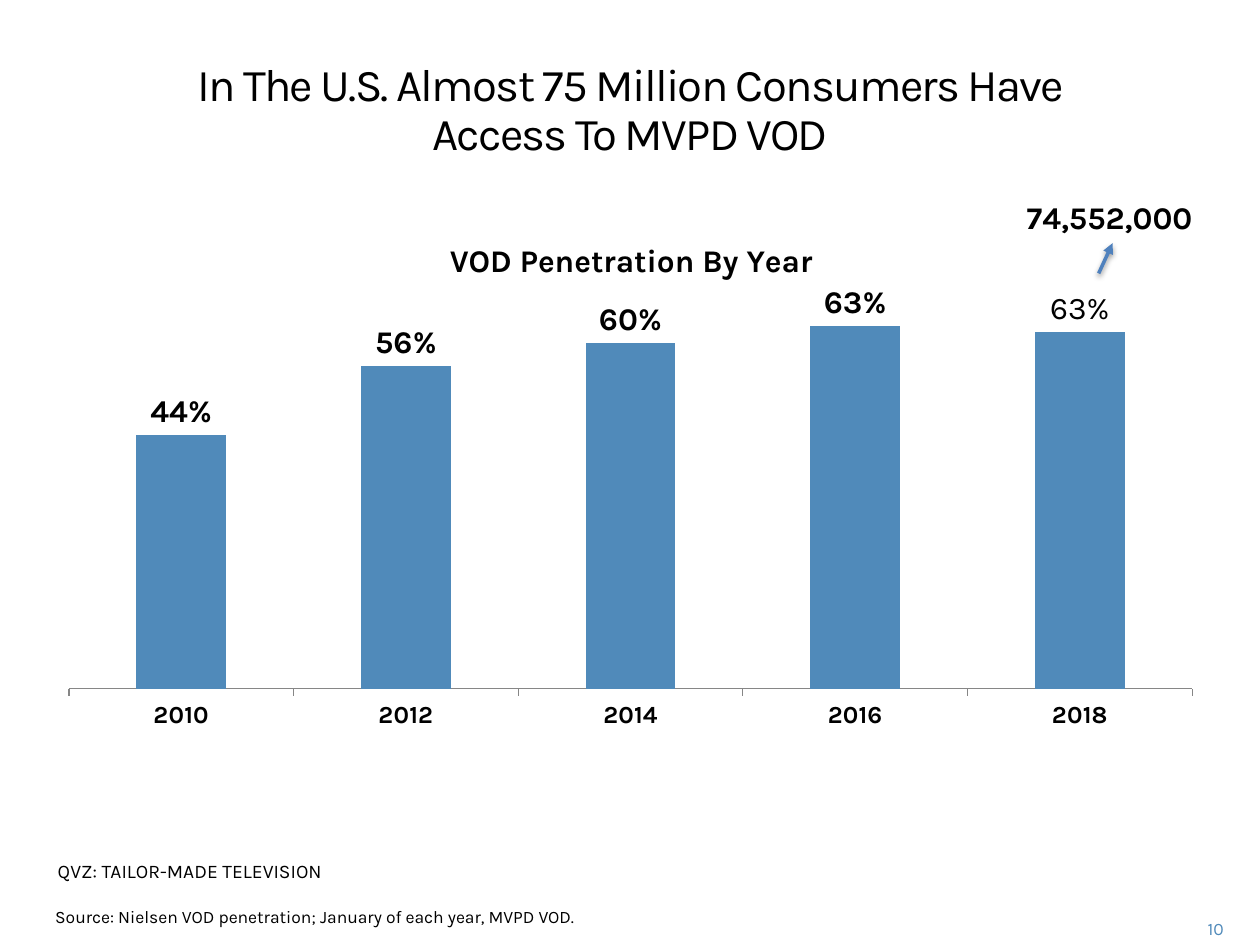
from dataclasses import dataclass
from typing import Optional

from lxml import etree
from pptx import Presentation
from pptx.chart.data import CategoryChartData
from pptx.dml.color import RGBColor
from pptx.enum.chart import XL_CHART_TYPE, XL_LABEL_POSITION, XL_TICK_LABEL_POSITION, XL_TICK_MARK
from pptx.enum.shapes import MSO_CONNECTOR
from pptx.enum.text import MSO_ANCHOR, PP_ALIGN
from pptx.oxml import parse_xml
from pptx.oxml.ns import nsdecls, qn
from pptx.util import Inches, Length, Pt

COLUMN_CLUSTERED = XL_CHART_TYPE.COLUMN_CLUSTERED
OUTSIDE_END = XL_LABEL_POSITION.OUTSIDE_END
NO_TICK_LABELS = XL_TICK_LABEL_POSITION.NONE
TICK_OUTSIDE, TICK_NONE = XL_TICK_MARK.OUTSIDE, XL_TICK_MARK.NONE
STRAIGHT = MSO_CONNECTOR.STRAIGHT
TOP, MIDDLE = MSO_ANCHOR.TOP, MSO_ANCHOR.MIDDLE
LEFT, CENTER, RIGHT = PP_ALIGN.LEFT, PP_ALIGN.CENTER, PP_ALIGN.RIGHT

BLACK = RGBColor(0x00, 0x00, 0x00)
BAR_BLUE = RGBColor(0x50, 0x8A, 0xBA)
ARROW_BLUE = RGBColor(0x4F, 0x81, 0xBD)
AXIS_GRAY = RGBColor(0x86, 0x86, 0x86)
FONT = "Karla"

# The slide is a grid of 100 columns by 75 rows
SLIDE_WIDTH, SLIDE_HEIGHT = Inches(10), Inches(7.5)
COLUMNS, ROWS = 100, 75


@dataclass(frozen=True)
class Area:
    column: float
    row: float
    columns: float
    rows: float


@dataclass(frozen=True)
class Label:
    text: str
    area: Area
    size: float
    color: RGBColor = BLACK
    bold: bool = False
    align: PP_ALIGN = LEFT
    anchor: MSO_ANCHOR = TOP
    wrap: bool = True
    line_spacing: Optional[float] = None
    tracking: Optional[int] = None


LABELS = [
    Label("10", Area(92, 72.4, 6.1, 2.5), 10, BAR_BLUE, align=RIGHT, anchor=MIDDLE),
    Label("Source: Nielsen VOD penetration; January of each year, MVPD VOD.",
          Area(3.4, 71.4, 44.7, 2.7), 10, wrap=False),
    Label("In The U.S. Almost 75 Million Consumers Have Access To MVPD VOD",
          Area(9.1, 4.1, 81.8, 9.4), 26, align=CENTER, anchor=MIDDLE,
          line_spacing=28, tracking=-100),
    Label("74,552,000", Area(80.5, 15.2, 15.7, 4), 18, bold=True, wrap=False),
    Label("QVZ: TAILOR-MADE TELEVISION", Area(3.6, 67.7, 30.8, 4.7), 11),
]

PENETRATION = {"2010": 0.44, "2012": 0.56, "2014": 0.6, "2016": 0.63, "2018": 0.62}
CHART_AREA = Area(3.9, 16.9, 92.2, 42)


def across(columns: float) -> Length:
    return Length(round(SLIDE_WIDTH * columns / COLUMNS))


def down(rows: float) -> Length:
    return Length(round(SLIDE_HEIGHT * rows / ROWS))


def place(area: Area) -> tuple[Length, Length, Length, Length]:
    return across(area.column), down(area.row), across(area.columns), down(area.rows)


def style_font(font, size: float, bold: bool = False, color: RGBColor = BLACK) -> None:
    font.name = FONT
    font.size = Pt(size)
    font.bold = bold
    font.color.rgb = color


def add_label(slide, label: Label) -> None:
    frame = slide.shapes.add_textbox(*place(label.area)).text_frame
    frame.word_wrap = label.wrap
    frame.vertical_anchor = label.anchor
    paragraph = frame.paragraphs[0]
    paragraph.alignment = label.align
    if label.line_spacing:
        paragraph.line_spacing = Pt(label.line_spacing)
    run = paragraph.add_run()
    run.text = label.text
    style_font(run.font, label.size, label.bold, label.color)
    if label.tracking:
        run.font._element.set("spc", str(label.tracking))


def manual_layout(target: str, **shares: float):
    """Build a chart layout from shares of the chart's size."""
    layout = parse_xml(f"<c:layout {nsdecls('c')}><c:manualLayout/></c:layout>")
    values = {"layoutTarget": target} if target else {}
    values |= {"xMode": "edge", "yMode": "edge"} | shares
    for name, value in values.items():
        etree.SubElement(layout[0], qn(f"c:{name}")).set("val", str(value))
    return layout


def replace_layout(parent, layout, position: int) -> None:
    for old in parent.findall(qn("c:layout")):
        parent.remove(old)
    parent.insert(position, layout)


def add_penetration_chart(slide) -> None:
    data = CategoryChartData(number_format="0%")
    data.categories = list(PENETRATION)
    data.add_series("Series 1", list(PENETRATION.values()))
    chart = slide.shapes.add_chart(COLUMN_CLUSTERED, *place(CHART_AREA), data).chart
    style_font(chart.font, 18)
    chart.has_legend = False

    # Title and plot position
    chart.has_title = True
    title = chart.chart_title
    title.include_in_layout = False
    run = title.text_frame.paragraphs[0].add_run()
    run.text = "VOD Penetration By Year"
    style_font(run.font, 18, bold=True)
    replace_layout(title._element, manual_layout("", x=0.34, y=0.04), 1)
    plot_area = chart._chartSpace.chart.plotArea
    replace_layout(plot_area, manual_layout("inner", x=0.017, y=0.138, w=0.967, h=0.761), 0)

    # Axes
    category_axis, value_axis = chart.category_axis, chart.value_axis
    category_axis.major_tick_mark = TICK_OUTSIDE
    category_axis.format.line.color.rgb = AXIS_GRAY
    style_font(category_axis.tick_labels.font, 14, bold=True)
    value_axis.minimum_scale, value_axis.maximum_scale = 0, 0.7
    value_axis.has_major_gridlines = False
    value_axis.major_tick_mark = TICK_NONE
    value_axis.tick_label_position = NO_TICK_LABELS
    value_axis.visible = False

    # Bars and their labels
    plot = chart.plots[0]
    plot.gap_width = 150
    plot.vary_by_categories = False
    series = plot.series[0]
    series.format.fill.solid()
    series.format.fill.fore_color.rgb = BAR_BLUE
    labels = series.data_labels
    labels.show_value = True
    labels.position = OUTSIDE_END
    labels.number_format = "0%"
    labels.number_format_is_linked = False
    style_font(labels.font, 18, bold=True)
    last_label = series.points[len(PENETRATION) - 1].data_label
    run = last_label.text_frame.paragraphs[0].add_run()
    run.text = "63%"
    style_font(run.font, 18)
    last_label.position = OUTSIDE_END


def add_arrow(slide, start: tuple[float, float], end: tuple[float, float]) -> None:
    arrow = slide.shapes.add_connector(
        STRAIGHT, across(start[0]), down(start[1]), across(end[0]), down(end[1]))
    arrow.line.color.rgb = ARROW_BLUE
    arrow.line.width = Pt(2)
    etree.SubElement(arrow.line._get_or_add_ln(), qn("a:tailEnd")).set("type", "triangle")
    arrow._element.spPr.append(parse_xml(
        f"<a:effectLst {nsdecls('a')}>"
        f'<a:outerShdw blurRad="{Pt(3.1)}" dist="{Pt(1.6)}" dir="5400000" rotWithShape="0">'
        f'<a:srgbClr val="{BLACK}"><a:alpha val="38000"/></a:srgbClr>'
        "</a:outerShdw></a:effectLst>"))


def main() -> None:
    presentation = Presentation()
    presentation.slide_width, presentation.slide_height = SLIDE_WIDTH, SLIDE_HEIGHT
    slide = presentation.slides.add_slide(presentation.slide_layouts[6])
    add_penetration_chart(slide)
    for label in LABELS:
        add_label(slide, label)
    # Arrow from the last bar to its head count
    add_arrow(slide, (87.2, 21.7), (88.3, 19.3))
    presentation.save("out.pptx")


if __name__ == "__main__":
    main()
